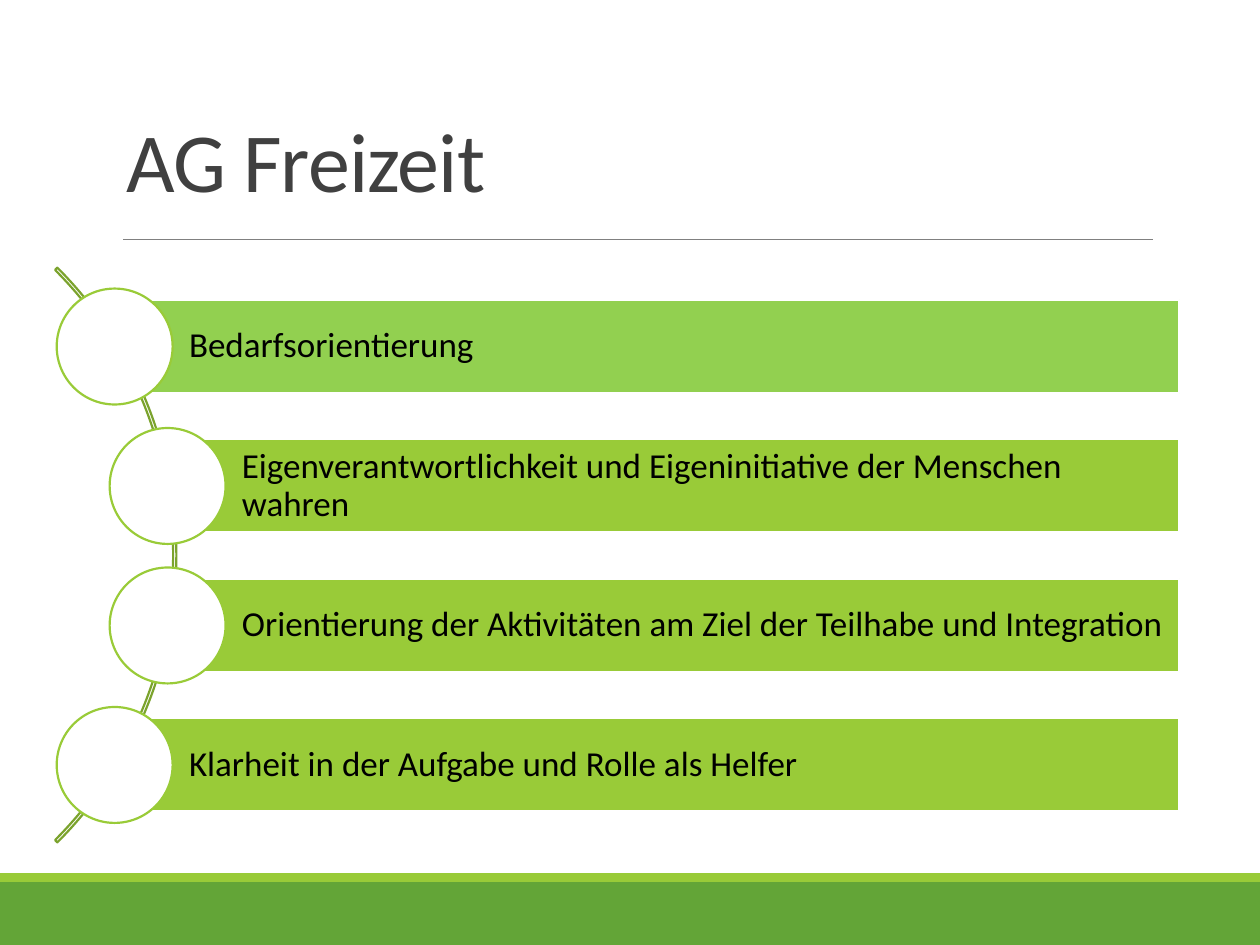
from lxml import etree
from pptx import Presentation, util as u
from pptx.dml.color import RGBColor
from pptx.enum import shapes, text
from pptx.oxml.ns import qn

Inches = u.Inches
COLORS = {
    "title": "404040", "text": "000000", "white": "FFFFFF", "rule": "808080",
    "footer": "63A537", "lime": "99CB38", "highlight": "92D050", "arc": "7BA32D",
}
PRINCIPLES = [
    ("Bedarfsorientierung", 0.45, "highlight"),
    ("Eigenverantwortlichkeit und Eigeninitiative der Menschen wahren", 0.87, "lime"),
    ("Orientierung der Aktivitäten am Ziel der Teilhabe und Integration", 0.87, "lime"),
    ("Klarheit in der Aufgabe und Rolle als Helfer", 0.45, "lime"),
]


def write(frame, wording, size, color, anchor, line_spacing, insets, tracking=0):
    frame.word_wrap = True
    frame.auto_size = text.MSO_AUTO_SIZE.NONE
    frame.vertical_anchor = anchor
    frame.margin_left, frame.margin_top, frame.margin_right, frame.margin_bottom = map(Inches, insets)
    paragraph = frame.paragraphs[0]
    paragraph.alignment = text.PP_ALIGN.LEFT
    paragraph.line_spacing = line_spacing
    run = paragraph.add_run()
    run.text = wording
    run.font.name = "Calibri"
    run.font.size = u.Pt(size)
    run.font.color.rgb = RGBColor.from_string(COLORS[color])
    if tracking:
        run.font._element.set("spc", str(int(tracking * 100)))


def draw(kind, left, top, width, height, fill=None, line=None):
    shape = slide.shapes.add_shape(kind, Inches(left), Inches(top), Inches(width), Inches(height))
    shape.shadow.inherit = False
    if fill:
        shape.fill.solid()
        shape.fill.fore_color.rgb = RGBColor.from_string(COLORS[fill])
    else:
        shape.fill.background()
    if line:
        shape.line.color.rgb = RGBColor.from_string(COLORS[line])
        shape.line.width = u.Pt(1.25)
    else:
        shape.line.fill.background()
    return shape


prs = Presentation()
prs.slide_width, prs.slide_height = Inches(10), Inches(7.5)
slide = prs.slides.add_slide(prs.slide_layouts[5])

rule = slide.shapes.add_connector(
    shapes.MSO_CONNECTOR.STRAIGHT, Inches(0.98), Inches(1.9), Inches(9.15), Inches(1.9))
rule.line.color.rgb = RGBColor.from_string(COLORS["rule"])
rule.line.width = u.Pt(0.5)
etree.SubElement(rule._element.spPr, qn("a:effectLst"))

RECTANGLE = shapes.MSO_SHAPE.RECTANGLE
draw(RECTANGLE, 0, 7, 10, 0.5, fill="footer")
draw(RECTANGLE, 0, 6.93, 10, 0.07, fill="lime")

title = slide.shapes.title
title.left, title.top, title.width, title.height = map(Inches, (0.9, 0.93, 8.25, 0.97))
write(title.text_frame, "AG Freizeit", size=48, color="title", anchor=text.MSO_ANCHOR.TOP,
      line_spacing=0.85, insets=(0.1, 0.05, 0.1, 0.05), tracking=-0.5)

arc = draw(shapes.MSO_SHAPE.BLOCK_ARC, -5.05, 1.18, 6.45, 6.45, line="arc")
for index, value in enumerate((189, 27, 0.004)):
    arc.adjustments[index] = value

DIAMETER, BAR_HEIGHT, BAR_RIGHT = 0.92, 0.74, 9.36
FIRST_TOP, PITCH = 2.29, 1.107
for row, (principle, left, fill) in enumerate(PRINCIPLES):
    top = FIRST_TOP + row * PITCH
    bar_left = left + DIAMETER / 2
    bar = draw(RECTANGLE, bar_left, top + (DIAMETER - BAR_HEIGHT) / 2,
               BAR_RIGHT - bar_left, BAR_HEIGHT, fill=fill, line="white")
    write(bar.text_frame, principle, size=20, color="text", anchor=text.MSO_ANCHOR.MIDDLE,
          line_spacing=0.9, insets=(0.59, 0.06, 0.06, 0.06))
    draw(shapes.MSO_SHAPE.OVAL, left, top, DIAMETER, DIAMETER, fill="white", line="lime")

prs.save("out.pptx")
